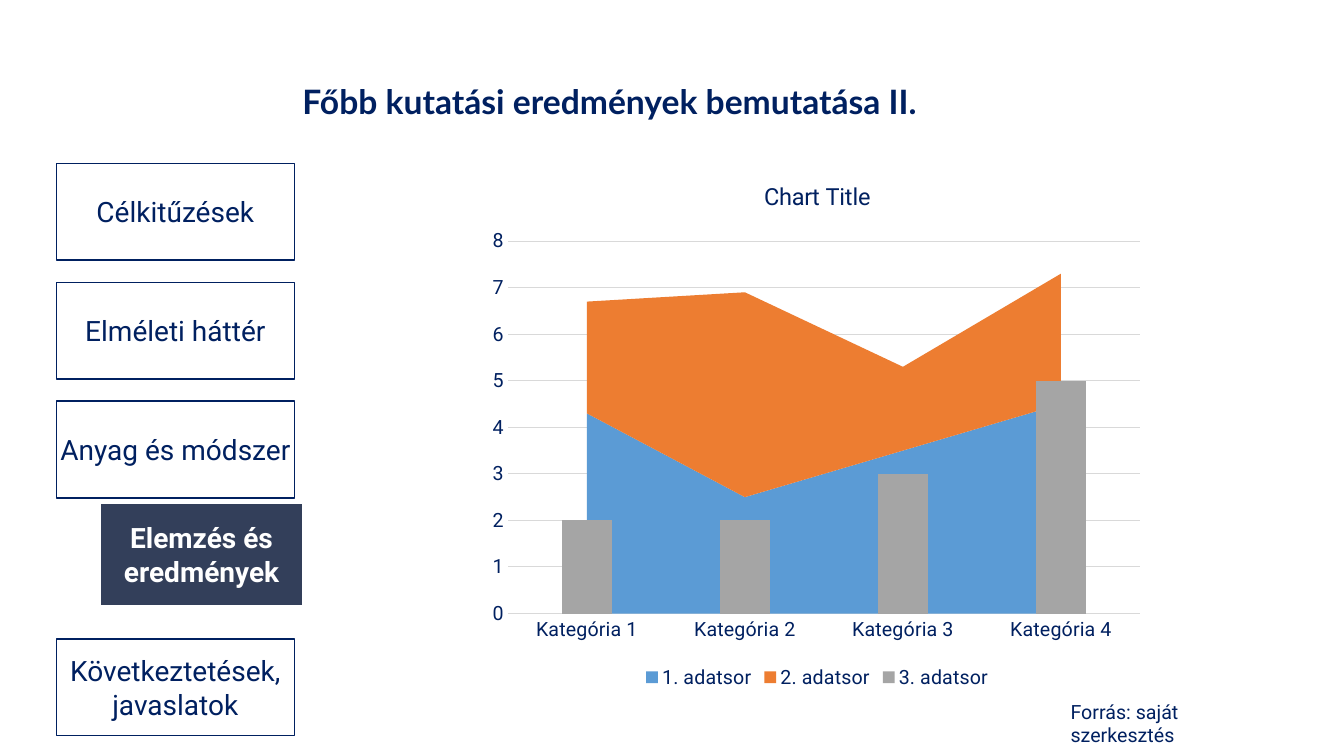
"""Build the research results slide with its section navigation and combined chart."""
import dataclasses

import pptx
import pptx.chart.chart
import pptx.chart.data
import pptx.dml.color
import pptx.enum.chart
import pptx.enum.shapes
import pptx.enum.text
import pptx.oxml
import pptx.oxml.ns
import pptx.shapes.base
import pptx.slide
import pptx.text.text
import pptx.util

Inches = pptx.util.Inches
Pt = pptx.util.Pt
RGBColor = pptx.dml.color.RGBColor

NAVY = RGBColor(0x00, 0x20, 0x60)
SLATE = RGBColor(0x33, 0x3F, 0x5A)
WHITE = RGBColor(0xFF, 0xFF, 0xFF)
GRID = RGBColor(0xD9, 0xD9, 0xD9)
BLUE = RGBColor(0x5B, 0x9B, 0xD5)
ORANGE = RGBColor(0xED, 0x7D, 0x31)
GRAY = RGBColor(0xA5, 0xA5, 0xA5)

BODY_FONT = "Roboto"
STEP_LEFT, STEP_TOP, STEP_PITCH = 0.56, 1.62, 1.18
STEP_WIDTH, STEP_HEIGHT = 2.36, 0.96
ACTIVE_CORNERS = [(0.6, 5.14), (2.83, 5.16), (2.83, 6.1), (0.6, 6.13)]


@dataclasses.dataclass
class Step:
    text: str
    active: bool = False
    margin: float = 0.1


@dataclasses.dataclass
class Series:
    name: str
    values: tuple[float, ...]
    color: RGBColor


STEPS = [
    Step("Célkitűzések"),
    Step("Elméleti háttér"),
    Step("Anyag és módszer", margin=0),
    Step("Elemzés és eredmények", active=True),
    Step("Következtetések, javaslatok"),
]
CATEGORIES = [f"Kategória {number}" for number in range(1, 5)]
SERIES = [
    Series("1. adatsor", (4.3, 2.5, 3.5, 4.5), BLUE),
    Series("2. adatsor", (2.4, 4.4, 1.8, 2.8), ORANGE),
    Series("3. adatsor", (2, 2, 3, 5), GRAY),
]


def style_font(font: pptx.text.text.Font, size: float, color: RGBColor = NAVY,
               name: str = BODY_FONT, bold: bool = False) -> None:
    font.name = name
    font.size = Pt(size)
    font.bold = bold
    font.color.rgb = color


def add_title(slide: pptx.slide.Slide) -> None:
    title = slide.shapes.title
    title.left, title.top = Inches(2.9), Inches(0.76)
    title.width, title.height = Inches(7.54), Inches(0.5)
    frame = title.text_frame
    frame.auto_size = pptx.enum.text.MSO_AUTO_SIZE.NONE
    frame.vertical_anchor = pptx.enum.text.MSO_ANCHOR.BOTTOM
    paragraph = frame.paragraphs[0]
    paragraph.alignment = pptx.enum.text.PP_ALIGN.LEFT
    paragraph.line_spacing = 0.9
    paragraph.space_before = Pt(0)
    run = paragraph.add_run()
    run.text = "Főbb kutatási eredmények bemutatása II."
    style_font(run.font, 24, name="Lato", bold=True)


def add_step_shape(slide: pptx.slide.Slide, step: Step, top: float) -> pptx.shapes.base.BaseShape:
    if step.active:
        start, *corners = ACTIVE_CORNERS
        builder = slide.shapes.build_freeform(*start, scale=Inches(1))
        builder.add_line_segments(corners, close=True)
        return builder.convert_to_shape()
    shape = slide.shapes.add_shape(
        pptx.enum.shapes.MSO_SHAPE.ROUNDED_RECTANGLE, Inches(STEP_LEFT), Inches(top),
        Inches(STEP_WIDTH), Inches(STEP_HEIGHT))
    shape.adjustments[0] = 0
    return shape


def add_step(slide: pptx.slide.Slide, step: Step, top: float) -> None:
    shape = add_step_shape(slide, step, top)
    shape.shadow.inherit = False
    shape.fill.solid()
    shape.fill.fore_color.rgb = SLATE if step.active else WHITE
    if step.active:
        shape.line.fill.background()
    else:
        shape.line.color.rgb = NAVY
        shape.line.width = Pt(1)
    frame = shape.text_frame
    frame.word_wrap = True
    frame.vertical_anchor = pptx.enum.text.MSO_ANCHOR.MIDDLE
    frame.margin_left = frame.margin_right = Inches(step.margin)
    paragraph = frame.paragraphs[0]
    paragraph.alignment = pptx.enum.text.PP_ALIGN.CENTER
    run = paragraph.add_run()
    run.text = step.text
    style_font(run.font, 20, WHITE if step.active else NAVY, bold=step.active)


def move_last_series_to_columns(chart: pptx.chart.chart.Chart) -> None:
    area = chart.element.xpath(".//c:areaChart")[0]
    columns = pptx.oxml.parse_xml(
        f'<c:barChart {pptx.oxml.ns.nsdecls("c")}><c:barDir val="col"/>'
        '<c:grouping val="clustered"/><c:varyColors val="0"/>'
        '<c:gapWidth val="219"/></c:barChart>')
    columns.insert(3, area.xpath("./c:ser")[-1])
    for axis in area.xpath("./c:axId"):
        axis_id = pptx.oxml.parse_xml(
            f'<c:axId {pptx.oxml.ns.nsdecls("c")} val="{axis.get("val")}"/>')
        columns.append(axis_id)
    area.addnext(columns)
    chart.element.xpath(".//c:valAx/c:crossBetween")[0].set("val", "between")


def set_plot_layout(chart: pptx.chart.chart.Chart) -> None:
    plot_area = chart.element.xpath(".//c:plotArea")[0]
    for layout in plot_area.xpath("./c:layout"):
        plot_area.remove(layout)
    places = "".join(f'<c:{name} val="{value}"/>' for name, value in
                     {"x": 0.04, "y": 0.15, "w": 0.94, "h": 0.7}.items())
    plot_area.insert(0, pptx.oxml.parse_xml(
        f'<c:layout {pptx.oxml.ns.nsdecls("c")}><c:manualLayout>'
        '<c:layoutTarget val="inner"/><c:xMode val="edge"/><c:yMode val="edge"/>'
        f'{places}</c:manualLayout></c:layout>'))


def add_results_chart(slide: pptx.slide.Slide) -> None:
    data = pptx.chart.data.CategoryChartData()
    data.categories = CATEGORIES
    for series in SERIES:
        data.add_series(series.name, series.values)
    chart = slide.shapes.add_chart(
        pptx.enum.chart.XL_CHART_TYPE.AREA_STACKED, Inches(4.77), Inches(1.6),
        Inches(6.67), Inches(5.28), data).chart
    style_font(chart.font, 14)
    for plotted, series in zip(chart.plots[0].series, SERIES):
        plotted.format.fill.solid()
        plotted.format.fill.fore_color.rgb = series.color
    chart.plots[0].vary_by_categories = False

    run = chart.chart_title.text_frame.paragraphs[0].add_run()
    run.text = "Chart Title"
    style_font(run.font, 16.8)
    chart.has_legend = True
    chart.legend.position = pptx.enum.chart.XL_LEGEND_POSITION.BOTTOM
    chart.legend.include_in_layout = False
    style_font(chart.legend.font, 14)

    for axis in (chart.category_axis, chart.value_axis):
        axis.major_tick_mark = axis.minor_tick_mark = pptx.enum.chart.XL_TICK_MARK.NONE
        style_font(axis.tick_labels.font, 14)
    category_line = chart.category_axis.format.line
    chart.category_axis.has_major_gridlines = False
    chart.value_axis.has_major_gridlines = True
    for line in (category_line, chart.value_axis.major_gridlines.format.line):
        line.color.rgb = GRID
        line.width = Pt(0.75)
    chart.value_axis.format.line.fill.background()
    chart.value_axis.minimum_scale, chart.value_axis.maximum_scale = 0, 8
    chart.value_axis.major_unit = 1
    move_last_series_to_columns(chart)
    set_plot_layout(chart)


def add_source_note(slide: pptx.slide.Slide) -> None:
    box = slide.shapes.add_textbox(Inches(10.52), Inches(6.89), Inches(2.26), Inches(0.34))
    box.text_frame.word_wrap = True
    run = box.text_frame.paragraphs[0].add_run()
    run.text = "Forrás: saját szerkesztés"
    style_font(run.font, 14)


def main() -> None:
    presentation = pptx.Presentation()
    presentation.slide_width, presentation.slide_height = Inches(13.33), Inches(7.5)
    slide = presentation.slides.add_slide(presentation.slide_layouts[5])
    add_results_chart(slide)
    add_source_note(slide)
    add_title(slide)
    for index, step in enumerate(STEPS):
        add_step(slide, step, STEP_TOP + index * STEP_PITCH)
    presentation.save("out.pptx")


if __name__ == "__main__":
    main()
